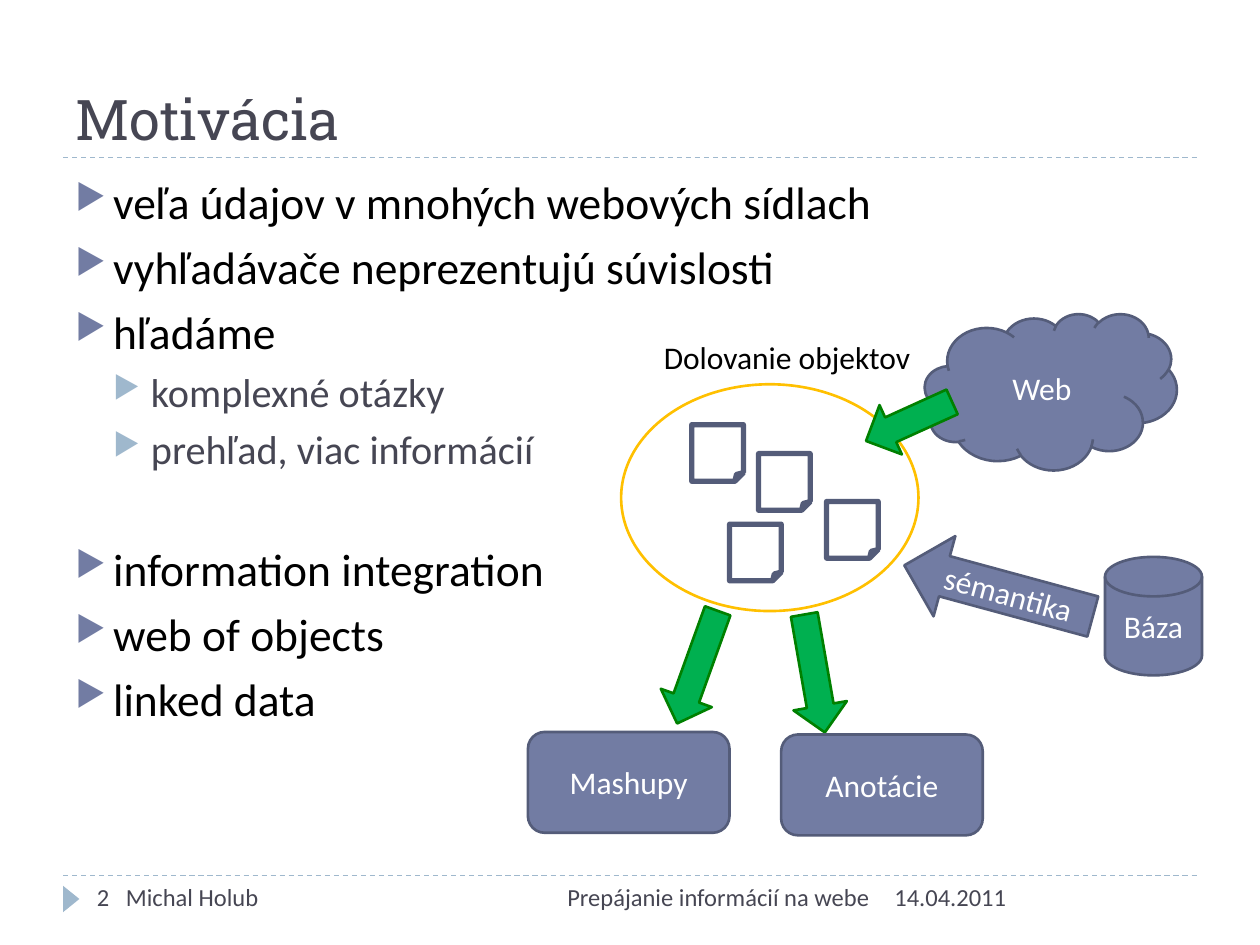
import pptx
import pptx.dml.color
import pptx.enum.dml
import pptx.enum.shapes
import pptx.enum.text
import pptx.oxml.ns
import pptx.util
from dataclasses import dataclass
from lxml import etree

Inches = pptx.util.Inches
Pt = pptx.util.Pt
Shape = pptx.enum.shapes.MSO_SHAPE
Align = pptx.enum.text.PP_ALIGN
Anchor = pptx.enum.text.MSO_ANCHOR


@dataclass(frozen=True)
class Theme:
    heading_font: str = "Roboto Slab"
    body_font: str = "Calibri"
    dark: str = "464653"
    black: str = "000000"
    white: str = "FFFFFF"
    accent: str = "727CA3"
    accent_line: str = "545C79"
    pale: str = "9FB8CD"
    green: str = "00B050"
    green_line: str = "008000"
    gold: str = "FFC000"
    title_size: int = 32
    body_size: int = 26
    sub_size: int = 23
    label_size: int = 18
    footer_size: int = 14


def rgb(color):
    return pptx.dml.color.RGBColor.from_string(color)


def add_child(parent, tag, **attributes):
    child = etree.SubElement(parent, pptx.oxml.ns.qn(tag))
    for name, value in attributes.items():
        child.set(name, str(value))
    return child


def write_text(paragraph, text, *, size, color, font, align=Align.LEFT, before=0):
    paragraph.alignment = align
    paragraph.space_before = Pt(before)
    run = paragraph.add_run()
    run.text = text
    run.font.size = Pt(size)
    run.font.name = font
    run.font.color.rgb = rgb(color)


def set_bullet(paragraph, level, color):
    """Give the paragraph a triangle bullet with a hanging indent."""
    paragraph.level = level
    properties = paragraph._p.get_or_add_pPr()
    properties.set("marL", str(Inches(0.3 * (level + 1))))
    properties.set("indent", str(Inches(-0.3)))
    add_child(add_child(properties, "a:buClr"), "a:srgbClr", val=color)
    add_child(properties, "a:buSzPct", val=76000)
    add_child(properties, "a:buChar", char="▶")


class SlideBuilder:
    def __init__(self, slide, theme):
        self.slide = slide
        self.theme = theme

    def add_text(self, box, text, *, size, color, font=None, align=Align.LEFT,
                 anchor=Anchor.TOP):
        frame = self.add_frame(box)
        frame.vertical_anchor = anchor
        write_text(frame.paragraphs[0], text, size=size, color=color,
                   font=font or self.theme.body_font, align=align)

    def add_frame(self, box):
        frame = self.slide.shapes.add_textbox(*map(Inches, box)).text_frame
        frame.word_wrap = True
        return frame

    def add_bullets(self, box, items):
        """Items are (text, level, space before in points)."""
        theme = self.theme
        styles = [(theme.body_size, theme.black, theme.accent),
                  (theme.sub_size, theme.dark, theme.pale)]
        frame = self.add_frame(box)
        for index, (text, level, before) in enumerate(items):
            paragraph = frame.add_paragraph() if index else frame.paragraphs[0]
            size, color, bullet_color = styles[level]
            write_text(paragraph, text, size=size, color=color,
                       font=theme.body_font, before=before)
            set_bullet(paragraph, level, bullet_color)

    def add_shape(self, kind, box, *, fill=None, line=None, width=1.5,
                  rotation=0, text=None):
        shape = self.slide.shapes.add_shape(kind, *map(Inches, box))
        shape.shadow.inherit = False
        shape.rotation = rotation
        if fill:
            shape.fill.solid()
            shape.fill.fore_color.rgb = rgb(fill)
        else:
            shape.fill.background()
        if line:
            shape.line.color.rgb = rgb(line)
            shape.line.width = Pt(width)
        else:
            shape.line.fill.background()
        if text:
            shape.text_frame.word_wrap = True
            shape.text_frame.vertical_anchor = Anchor.MIDDLE
            write_text(shape.text_frame.paragraphs[0], text,
                       size=self.theme.label_size, color=self.theme.white,
                       font=self.theme.body_font, align=Align.CENTER)
        return shape

    def add_node(self, kind, box, text, rotation=0):
        self.add_shape(kind, box, fill=self.theme.accent,
                       line=self.theme.accent_line, rotation=rotation, text=text)

    def add_flow_arrow(self, box, rotation):
        self.add_shape(Shape.DOWN_ARROW, box, fill=self.theme.green,
                       line=self.theme.green_line, rotation=rotation)

    def add_page(self, left, top):
        self.add_shape(Shape.FOLDED_CORNER, (left, top, 0.41, 0.45),
                       line=self.theme.accent_line, width=3)

    def add_rule(self, y):
        """Draw a dashed line across the slide."""
        rule = self.slide.shapes.add_connector(
            pptx.enum.shapes.MSO_CONNECTOR.STRAIGHT,
            Inches(0.5), Inches(y), Inches(9.5), Inches(y))
        rule.line.color.rgb = rgb(self.theme.pale)
        rule.line.width = Pt(0.75)
        rule.line.dash_style = pptx.enum.dml.MSO_LINE.DASH
        add_child(rule._element.spPr, "a:effectLst")


def main():
    presentation = pptx.Presentation()
    presentation.slide_width = Inches(10)
    presentation.slide_height = Inches(7.5)
    theme = Theme()
    slide = presentation.slides.add_slide(presentation.slide_layouts[6])
    builder = SlideBuilder(slide, theme)

    for y in (6.95, 1.25):
        builder.add_rule(y)
    builder.add_shape(Shape.ISOSCELES_TRIANGLE, (0.46, 7.07, 0.21, 0.13),
                      fill=theme.pale, rotation=90)
    builder.add_text((0.5, 0.17, 9, 1.08), "Motivácia", size=theme.title_size,
                     color=theme.dark, font=theme.heading_font,
                     anchor=Anchor.BOTTOM)
    for left, width, text, align in (
            (7, 2.5, "14.04.2011", Align.LEFT),
            (3.17, 3.83, "Prepájanie informácií na webe", Align.RIGHT),
            (0.67, 2.17, "2\u00a0\u00a0 Michal Holub".replace("\u00a0", " "), Align.LEFT)):
        builder.add_text((left, 6.95, width, 0.4), text, size=theme.footer_size,
                         color=theme.dark, align=align)

    builder.add_bullets((0.5, 1.33, 9, 5.4), [
        ("veľa údajov v mnohých webových sídlach", 0, 6),
        ("vyhľadávače neprezentujú súvislosti", 0, 6),
        ("hľadáme", 0, 6),
        ("komplexné otázky", 1, 5),
        ("prehľad, viac informácií", 1, 5),
        ("information integration", 0, 39),
        ("web of objects", 0, 6),
        ("linked data", 0, 6),
    ])

    builder.add_node(Shape.CLOUD, (7.34, 2.49, 2, 1.24), "Web")
    builder.add_shape(Shape.OVAL, (4.93, 3.05, 2.36, 1.8), line=theme.gold)
    for left, top in ((5.49, 3.37), (6.02, 3.6), (6.56, 3.98), (5.79, 4.16)):
        builder.add_page(left, top)
    builder.add_text((5.17, 2.63, 2.2, 0.4), "Dolovanie objektov",
                     size=theme.label_size, color=theme.black)
    builder.add_node(Shape.LEFT_ARROW, (7.15, 4.36, 1.55, 0.66), "sémantika",
                     rotation=15.2)
    builder.add_flow_arrow((5.32, 4.82, 0.43, 0.95), 19.8)
    builder.add_flow_arrow((6.25, 4.87, 0.43, 0.95), 350.1)
    builder.add_node(Shape.ROUNDED_RECTANGLE, (4.19, 5.81, 1.6, 0.8), "Mashupy")
    builder.add_node(Shape.ROUNDED_RECTANGLE, (6.2, 5.83, 1.6, 0.8), "Anotácie")
    builder.add_flow_arrow((7, 2.97, 0.43, 0.75), 65.6)
    builder.add_node(Shape.FLOWCHART_MAGNETIC_DISK, (8.77, 4.42, 0.77, 0.94), "Báza")

    presentation.save("out.pptx")


if __name__ == "__main__":
    main()
